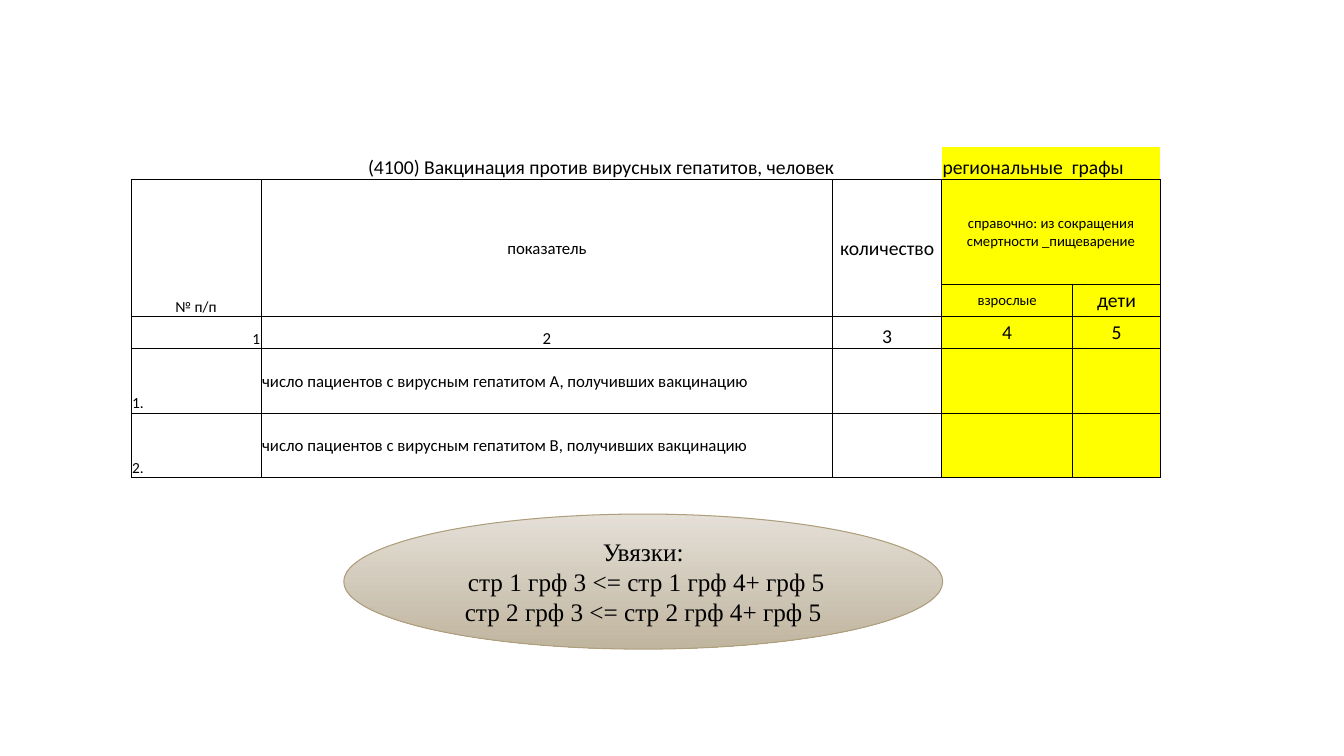
import lxml.etree
import pptx
import pptx.dml.color
import pptx.enum.shapes
import pptx.enum.text
import pptx.oxml.ns
import pptx.util

PX = 9144  # 100 px to the inch
YELLOW = "FFFF00"
BLACK = "000000"
LEFT, CENTER, RIGHT = (pptx.enum.text.PP_ALIGN.LEFT, pptx.enum.text.PP_ALIGN.CENTER,
                       pptx.enum.text.PP_ALIGN.RIGHT)
MIDDLE, BOTTOM = pptx.enum.text.MSO_ANCHOR.MIDDLE, pptx.enum.text.MSO_ANCHOR.BOTTOM


def color(hex_string):
    return pptx.dml.color.RGBColor.from_string(hex_string)


def set_border(cell, side, visible):
    """Give one side (L, R, T or B) a thin black line, or none."""
    line = lxml.etree.SubElement(cell._tc.get_or_add_tcPr(), pptx.oxml.ns.qn("a:ln" + side),
                                 w=str(pptx.util.Pt(0.5)))
    if visible:
        fill = lxml.etree.SubElement(line, pptx.oxml.ns.qn("a:solidFill"))
        lxml.etree.SubElement(fill, pptx.oxml.ns.qn("a:srgbClr"), val=BLACK)
    else:
        lxml.etree.SubElement(line, pptx.oxml.ns.qn("a:noFill"))


presentation = pptx.Presentation()
presentation.slide_width = 1333 * PX
presentation.slide_height = 750 * PX
slide = presentation.slides.add_slide(presentation.slide_layouts[6])

# Table grid
column_widths = [129, 567, 108, 130, 87]
row_heights = [32, 104, 32, 32, 64, 64]
table = slide.shapes.add_table(
    len(row_heights), len(column_widths), 130 * PX, 146 * PX,
    sum(column_widths) * PX, sum(row_heights) * PX).table
table.first_row = False
table.horz_banding = False
for column, width in zip(table.columns, column_widths):
    column.width = width * PX
for row, height in zip(table.rows, row_heights):
    row.height = height * PX

for row_index, row in enumerate(table.rows):
    for column_index, cell in enumerate(row.cells):
        cell.margin_left = cell.margin_right = cell.margin_top = PX
        cell.margin_bottom = 0
        for side in "LRTB":
            set_border(cell, side, row_index > 0 or side == "B")
        if column_index >= 3:
            cell.fill.solid()
            cell.fill.fore_color.rgb = color(YELLOW)
        else:
            cell.fill.background()

merged_ranges = [((0, 1), (0, 2)), ((0, 3), (0, 4)), ((1, 3), (1, 4))]
merged_ranges += [((1, column), (2, column)) for column in range(3)]
for first, last in merged_ranges:
    table.cell(*first).merge(table.cell(*last))

# Row, column, text, size, alignment, anchor
cell_texts = [
    (0, 1, "(4100) Вакцинация против вирусных гепатитов, человек", 14, CENTER, BOTTOM),
    (0, 3, "региональные  графы", 14, LEFT, BOTTOM),
    (1, 0, "№ п/п", 11, CENTER, BOTTOM),
    (1, 1, "показатель", 12, CENTER, MIDDLE),
    (1, 2, "количество", 14, CENTER, MIDDLE),
    (1, 3, "справочно: из сокращения смертности _пищеварение", 10.5, CENTER, MIDDLE),
    (2, 3, "взрослые", 10.5, CENTER, MIDDLE),
    (2, 4, "дети", 14, CENTER, MIDDLE),
    (3, 0, "1", 11, RIGHT, BOTTOM),
    (3, 1, "2", 12, CENTER, BOTTOM),
    (3, 2, "3", 14, CENTER, BOTTOM),
    (3, 3, "4", 14, CENTER, MIDDLE),
    (3, 4, "5", 14, CENTER, MIDDLE),
]
for number, virus in enumerate("АВ", start=1):
    patients = f"число пациентов с вирусным гепатитом {virus}, получивших вакцинацию"
    cell_texts.append((3 + number, 0, f"{number}.", 11, LEFT, BOTTOM))
    cell_texts.append((3 + number, 1, patients, 12, LEFT, MIDDLE))

for row_index, column_index, text, size, alignment, anchor in cell_texts:
    cell = table.cell(row_index, column_index)
    cell.vertical_anchor = anchor
    cell.text_frame.text = text
    paragraph = cell.text_frame.paragraphs[0]
    paragraph.alignment = alignment
    font = paragraph.runs[0].font
    font.name = "Calibri"
    font.size = pptx.util.Pt(size)
    font.color.rgb = color(BLACK)

# Checks between columns
checks = slide.shapes.add_shape(pptx.enum.shapes.MSO_SHAPE.OVAL,
                                341 * PX, 510 * PX, 594 * PX, 134 * PX)
checks.shadow.inherit = False
checks.fill.gradient()
checks.fill.gradient_angle = 270
for stop, stop_color in zip(checks.fill.gradient_stops, ["E4DFD7", "C0B59F"]):
    stop.color.rgb = color(stop_color)
checks.line.color.rgb = color("AE9E7C")
checks.line.width = pptx.util.Pt(0.75)
checks.text_frame.word_wrap = True
checks.text_frame.vertical_anchor = MIDDLE
checks.text_frame.text = ("Увязки:\n стр 1 грф 3 <= стр 1 грф 4+ грф 5\n"
                          "стр 2 грф 3 <= стр 2 грф 4+ грф 5")
for paragraph in checks.text_frame.paragraphs:
    paragraph.alignment = CENTER
    font = paragraph.runs[0].font
    font.name = "Times New Roman"
    font.size = pptx.util.Pt(18)
    font.color.rgb = color(BLACK)

presentation.save("out.pptx")
